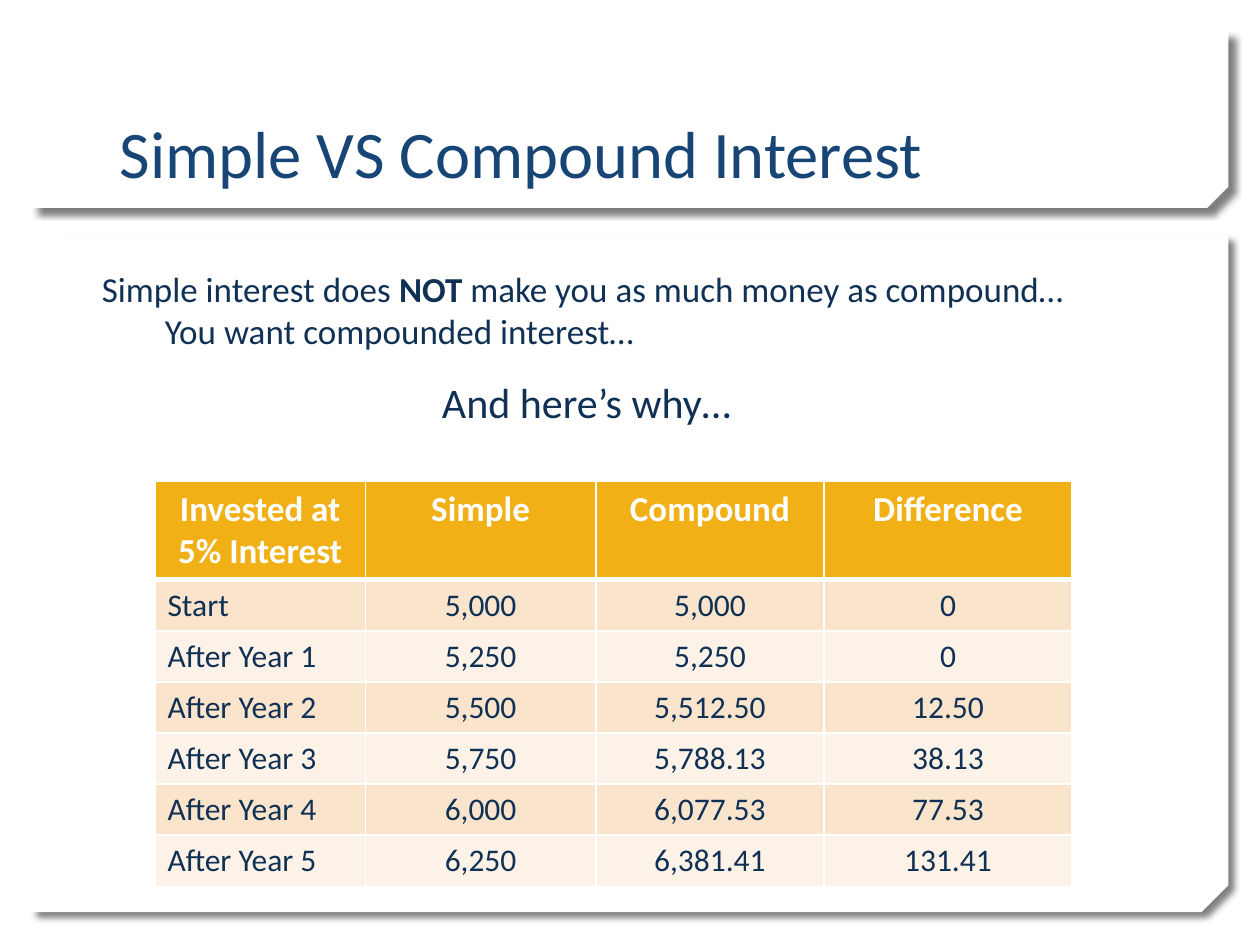
import pptx
import pptx.util
import pptx.dml.color
import pptx.enum.shapes
import pptx.enum.text
import pptx.oxml
import pptx.oxml.ns

Inches = pptx.util.Inches
Align = pptx.enum.text.PP_ALIGN
Anchor = pptx.enum.text.MSO_ANCHOR
FONT = "Calibri"
COLOURS = {
    "white": "FFFFFF",
    "title": "174576",
    "text": "103154",
    "header": "F1B015",
    "band_dark": "FAE4CC",
    "band_light": "FCF2E8",
    "shadow": "000000",
}


def rgb(name):
    return pptx.dml.color.RGBColor.from_string(COLOURS[name])


def add_span(para, text, size, colour, bold=False):
    span = para.add_run()
    span.text = text
    span.font.name = FONT
    span.font.size = pptx.util.Pt(size)
    span.font.bold = bold
    span.font.color.rgb = rgb(colour)


deck = pptx.Presentation()
deck.slide_width, deck.slide_height = Inches(10), Inches(7.5)
page = deck.slides.add_slide(deck.slide_layouts[5])
namespace = pptx.oxml.ns.nsdecls("a")

# White panels with a snipped lower right corner and a soft shadow
for top, height, snip in [(1.87, 5.37, 0.04), (0.25, 1.4, 0.12)]:
    panel = page.shapes.add_shape(
        pptx.enum.shapes.MSO_SHAPE.SNIP_2_DIAG_RECTANGLE,
        Inches(0.25), Inches(top), Inches(9.5), Inches(height))
    panel.adjustments[0] = 0
    panel.adjustments[1] = snip
    panel.fill.solid()
    panel.fill.fore_color.rgb = rgb("white")
    panel.line.fill.background()
    properties = panel._element.spPr
    properties.xfrm.set("flipV", "1")
    properties.append(pptx.oxml.parse_xml(
        f'<a:effectLst {namespace}><a:outerShdw blurRad="{pptx.util.Pt(4)}" '
        f'dist="{pptx.util.Pt(5)}" dir="2700000" algn="tl" rotWithShape="0">'
        f'<a:srgbClr val="{COLOURS["shadow"]}"><a:alpha val="50000"/></a:srgbClr>'
        '</a:outerShdw></a:effectLst>'))

# Title, brought in front of the panels
title = page.shapes.title
page.shapes._spTree.append(title._element)
title.left, title.top = Inches(0.85), Inches(0.32)
title.width, title.height = Inches(8.29), Inches(1.25)
title.text_frame.vertical_anchor = Anchor.BOTTOM
para = title.text_frame.paragraphs[0]
para.alignment = Align.LEFT
add_span(para, "Simple VS Compound Interest", 38, "title")

# Interest table
rows = [
    ("Invested at 5% Interest", "Simple", "Compound", "Difference"),
    ("Start", "5,000", "5,000", "0"),
    ("After Year 1", "5,250", "5,250", "0"),
    ("After Year 2", "5,500", "5,512.50", "12.50"),
    ("After Year 3", "5,750", "5,788.13", "38.13"),
    ("After Year 4", "6,000", "6,077.53", "77.53"),
    ("After Year 5", "6,250", "6,381.41", "131.41"),
]
column_widths = [1.67, 1.83, 1.81, 1.97]
table = page.shapes.add_table(
    len(rows), len(column_widths), Inches(1.23), Inches(3.82),
    Inches(sum(column_widths)), Inches(3.19)).table
for column, width in zip(table.columns, column_widths):
    column.width = Inches(width)
for r, values in enumerate(rows):
    is_header = r == 0
    table.rows[r].height = Inches(0.77 if is_header else 0.4)
    fill = "header" if is_header else "band_dark" if r % 2 else "band_light"
    for c, value in enumerate(values):
        cell = table.cell(r, c)
        cell_properties = cell._tc.get_or_add_tcPr()
        for side in ("L", "R", "T", "B"):
            thick = (r == 0 and side == "B") or (r == 1 and side == "T")
            cell_properties.append(pptx.oxml.parse_xml(
                f'<a:ln{side} {namespace} w="{pptx.util.Pt(3 if thick else 1)}">'
                f'<a:solidFill><a:srgbClr val="{COLOURS["white"]}"/></a:solidFill>'
                f'</a:ln{side}>'))
        cell.fill.solid()
        cell.fill.fore_color.rgb = rgb(fill)
        para = cell.text_frame.paragraphs[0]
        para.alignment = Align.CENTER if is_header or c else Align.LEFT
        if is_header:
            add_span(para, value, 20, "white", bold=True)
        else:
            add_span(para, value, 18, "text")

# Notes above the table: place, text size, then paragraphs of (text, bold) spans
notes = [
    ((0.71, 2.07, 8.07, 0.77), 20, [
        [("Simple interest does ", False), ("NOT", True),
         (" make you as much money as compound…", False)],
        [("\tYou want compounded interest…", False)],
    ]),
    ((3.41, 2.94, 2.57, 0.5), 24, [[("And here’s why…", False)]]),
]
for place, size, paragraphs in notes:
    box = page.shapes.add_textbox(*map(Inches, place))
    frame = box.text_frame
    frame.word_wrap = False
    frame.auto_size = pptx.enum.text.MSO_AUTO_SIZE.SHAPE_TO_FIT_TEXT
    for i, spans in enumerate(paragraphs):
        para = frame.add_paragraph() if i else frame.paragraphs[0]
        for text, bold in spans:
            add_span(para, text, size, "text", bold)

deck.save("out.pptx")
